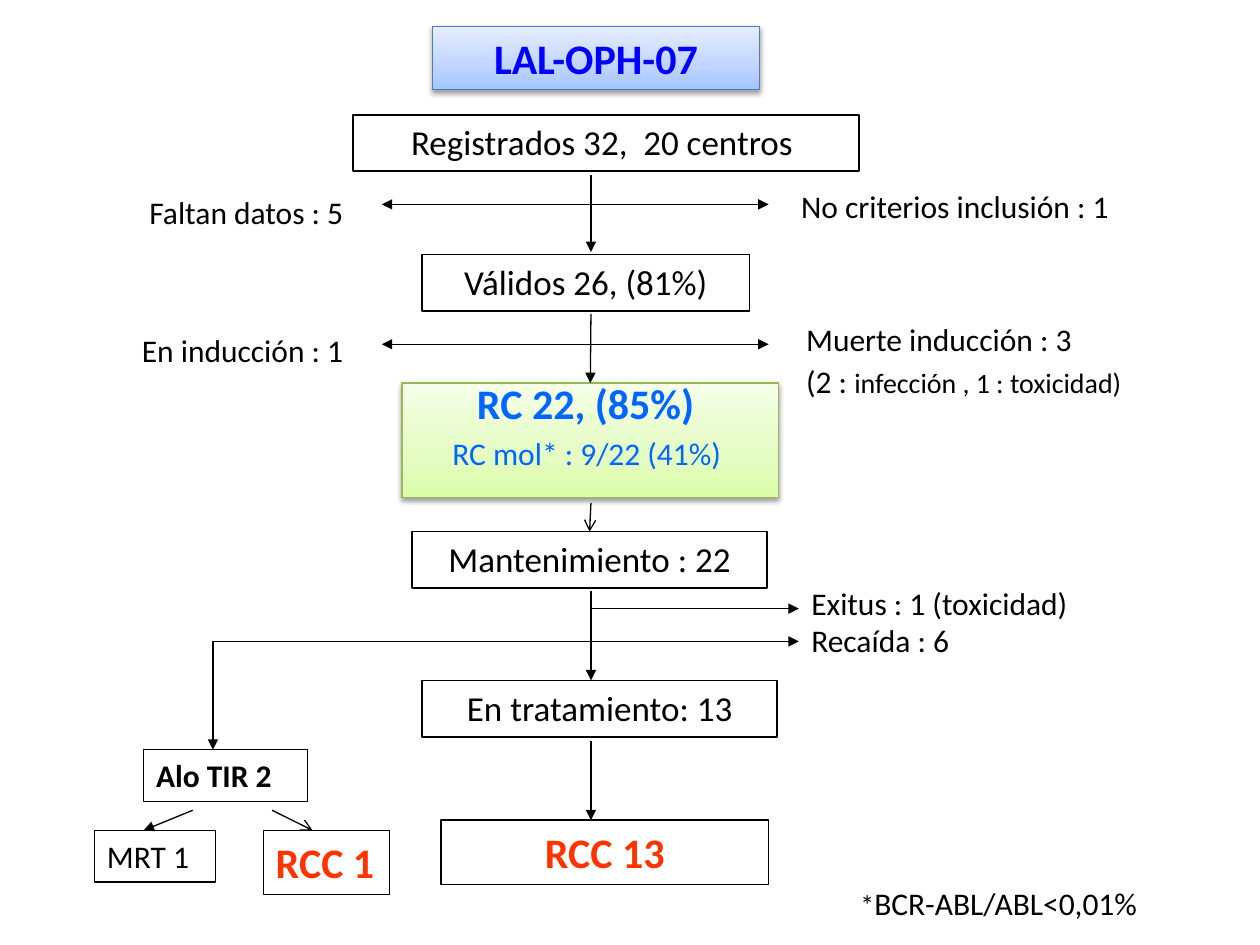
"""Build the LAL-OPH-07 patient flow chart slide."""
from lxml import etree
from pptx import Presentation
from pptx.dml.color import RGBColor
from pptx.enum.shapes import MSO_CONNECTOR as MC, MSO_SHAPE as MS
from pptx.enum.text import MSO_ANCHOR as MA, PP_ALIGN as PA
from pptx.oxml import parse_xml
from pptx.oxml.ns import nsdecls, qn
from pptx.util import Pt

C = {"black": "000000", "blue": "0000FF", "sky": "0066FF", "red": "FF3300",
     "title_line": "4B7EBC", "rc_line": "98B955"}
GRADIENTS = {"title": ("A4C4FF", "BFD4FF", "E6EEFF"),
             "rc": ("DAFDA7", "E4FCC2", "F5FFE7")}
MID = 337.7


def write(sp, paras, align, spacing=None):
    tf = sp.text_frame
    tf.word_wrap = True
    tf.vertical_anchor = MA.TOP
    for i, runs in enumerate(paras):
        p = tf.paragraphs[0] if i == 0 else tf.add_paragraph()
        p.alignment = align
        if spacing:
            p.line_spacing = spacing
        if i:
            p.space_before = Pt(9)
        for text, size, color, bold in runs:
            r = p.add_run()
            r.text = text
            r.font.name = "Calibri"
            r.font.size = Pt(size)
            r.font.bold = bold
            r.font.color.rgb = RGBColor.from_string(C[color])


def connect(x1, y1, x2, y2, head="triangle"):
    cn = s.shapes.add_connector(MC.STRAIGHT, Pt(x1), Pt(y1), Pt(x2), Pt(y2))
    cn.line.width = Pt(0.75)
    cn.line.color.rgb = RGBColor.from_string(C["black"])
    if head:
        etree.SubElement(cn.line._get_or_add_ln(), qn("a:tailEnd"), type=head)
    etree.SubElement(cn._element.spPr, qn("a:effectLst"))
    return cn


prs = Presentation()
prs.slide_width, prs.slide_height = Pt(720), Pt(540)
s = prs.slides.add_slide(prs.slide_layouts[6])

boxes = {}
for name, x, y, w, h, line, width, align, paras in [
    ("registered", 201.6, 65.5, 289.4, 32.4, "black", 1, PA.CENTER,
     [[("Registrados 32,  20 centros ", 20, "black", False)]]),
    ("valid", 241.2, 145.4, 187.2, 32.4, "black", 1, PA.CENTER,
     [[("Válidos 26, (81%)", 20, "black", False)]]),
    ("rc", 229.7, 218.9, 215.3, 65.5, "rc_line", 0.75, PA.CENTER,
     [[("RC 22, (85%) ", 24, "sky", True)],
      [("RC mol* : 9/22 (41%) ", 18, "sky", False)]]),
    ("maintenance", 235.4, 303.8, 203, 32.4, "black", 1, PA.CENTER,
     [[("Mantenimiento : 22", 20, "black", False)]]),
    ("title", 247, 15.1, 187.2, 36, "title_line", 0.75, PA.CENTER,
     [[("LAL-OPH-07", 24, "blue", True)]]),
    ("treatment", 241.2, 388.8, 203, 32.4, "black", 1, PA.CENTER,
     [[("En tratamiento: 13", 20, "black", False)]]),
    ("rcc13", 252, 468.7, 187.2, 36.7, "black", 1, PA.CENTER,
     [[("RCC 13", 24, "red", True)]]),
    ("allo", 82.1, 428.4, 93.6, 29.5, "black", 0.75, PA.LEFT,
     [[("Alo TIR 2", 18, "black", True)]]),
    ("mrt", 54, 474.5, 69.1, 29.5, "black", 0.75, PA.LEFT,
     [[("MRT 1", 18, "black", False)]]),
    ("rcc1", 150.5, 474.5, 72, 36.7, "black", 0.75, PA.LEFT,
     [[("RCC 1", 24, "red", True)]]),
]:
    sp = s.shapes.add_shape(MS.RECTANGLE, Pt(x), Pt(y), Pt(w), Pt(h))
    sp.shadow.inherit = False
    sp.fill.background()
    sp.line.color.rgb = RGBColor.from_string(C[line])
    sp.line.width = Pt(width)
    write(sp, paras, align, 0.75 if name == "rc" else None)
    boxes[name] = sp

for name, colors in GRADIENTS.items():
    spPr = boxes[name]._element.spPr
    stops = "".join(f'<a:gs pos="{pos}"><a:srgbClr val="{color}"/></a:gs>'
                    for pos, color in zip((0, 35000, 100000), colors))
    spPr.replace(spPr.find(qn("a:noFill")), parse_xml(
        f'<a:gradFill {nsdecls("a")} rotWithShape="1"><a:gsLst>{stops}</a:gsLst>'
        '<a:lin ang="16200000" scaled="0"/></a:gradFill>'))
    spPr.find(qn("a:effectLst")).append(parse_xml(
        f'<a:outerShdw {nsdecls("a")} blurRad="40000" dist="20000" dir="5400000" '
        'rotWithShape="0"><a:srgbClr val="000000"><a:alpha val="38000"/>'
        '</a:srgbClr></a:outerShdw>'))

for x, y, w, h, align, spacing, paras in [
    (2.9, 106.6, 204.5, 28.8, PA.RIGHT, None, [[("Faltan datos : 5 ", 18)]]),
    (2.9, 185.8, 204.5, 28.8, PA.RIGHT, None, [[("En inducción : 1 ", 18)]]),
    (450.7, 109.4, 269.3, 22.3, PA.LEFT, 0.7, [[("No criterios inclusión : 1", 18)]]),
    (453.6, 185, 266.4, 48.2, PA.LEFT, 0.7,
     [[("Muerte inducción : 3", 18)],
      [("(2 : ", 18), ("infección , 1 : toxicidad)", 16)]]),
    (456.5, 336.2, 253.4, 22.3, PA.LEFT, 0.7, [[("Exitus : 1 (toxicidad)", 18)]]),
    (456.5, 357.1, 253.4, 22.3, PA.LEFT, 0.7, [[("Recaída : 6", 18)]]),
    (484.6, 501.8, 199.4, 28.8, PA.LEFT, None,
     [[("*", 16), ("BCR-ABL/ABL<0,01%", 18)]]),
]:
    tb = s.shapes.add_textbox(Pt(x), Pt(y), Pt(w), Pt(h))
    write(tb, [[(t, size, "black", False) for t, size in runs] for runs in paras],
          align, spacing)

for y1, y2 in [(100.1, 144), (337.7, 388.8), (423.4, 468.7)]:
    connect(MID, y1, MID, y2)
connect(MID, 179.3, MID, 218.9).end_connect(boxes["rc"], 0)
connect(MID, 287.3, MID, 303.8, "arrow").end_connect(boxes["maintenance"], 0)

for y in (116.8, 196.7):
    for x in (218.2, 439.2):
        connect(MID, y, x, y)
for y in (347.8, 366.5):
    connect(MID, y, 456.5, y)
connect(MID, 366.5, 121.7, 366.5, None)
connect(121.7, 366.5, 121.7, 428.4)
connect(110.2, 463, 82.1, 474.5)
connect(155.5, 463, 178.6, 474.5, "arrow")

prs.save("out.pptx")
